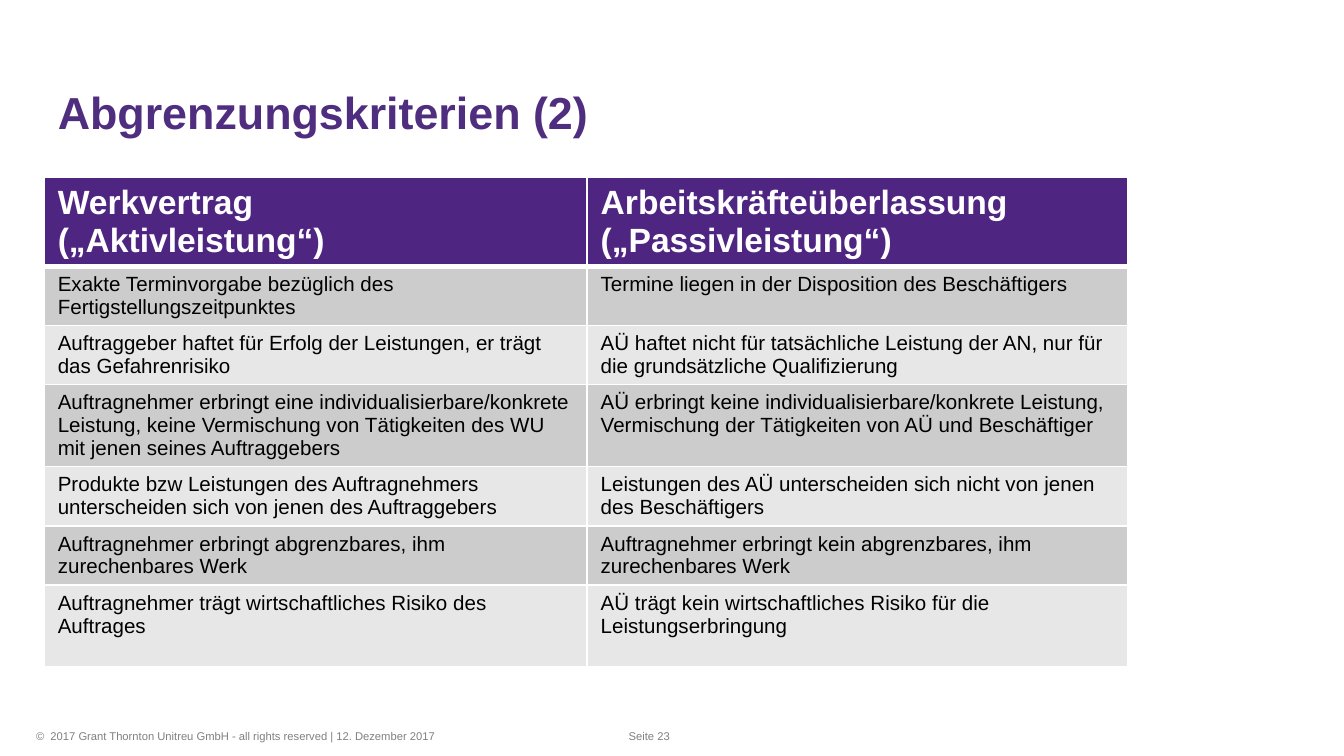
from pptx import Presentation
from pptx.dml.color import RGBColor
from pptx.enum.text import MSO_ANCHOR, PP_ALIGN
from pptx.oxml import parse_xml
from pptx.oxml.ns import nsdecls
from pptx.util import Inches, Pt


def add_run(paragraph, text, size, color, bold=False):
    run = paragraph.add_run()
    run.text = text
    run.font.name = "Arial"
    run.font.size = Pt(size)
    run.font.bold = bold
    run.font.color.rgb = RGBColor.from_string(color)


def add_border(cell, side, width):
    cell._tc.get_or_add_tcPr().append(parse_xml(
        f'<a:{side} {nsdecls("a")} w="{Pt(width)}"><a:solidFill>'
        f'<a:srgbClr val="FFFFFF"/></a:solidFill></a:{side}>'))


# Widescreen 16:9 slide
prs = Presentation()
prs.slide_width = Inches(10)
prs.slide_height = Inches(10 * 9 / 16)
slide = prs.slides.add_slide(prs.slide_layouts[5])

# Title
title = slide.shapes.title
title.left, title.top = Inches(0.33), Inches(0.37)
title.width, title.height = Inches(8.2), Inches(0.92)
title.text_frame.vertical_anchor = MSO_ANCHOR.MIDDLE
heading = title.text_frame.paragraphs[0]
heading.alignment = PP_ALIGN.LEFT
add_run(heading, "Abgrenzungskriterien (2)", 24, "4F2D7F", True)

# Comparison table: header first, one list of paragraphs per header cell
headers = [["Werkvertrag", "(„Aktivleistung“)"],
           ["Arbeitskräfteüberlassung („Passivleistung“)"]]
criteria = [
    ("Exakte Terminvorgabe bezüglich des Fertigstellungszeitpunktes",
     "Termine liegen in der Disposition des Beschäftigers"),
    ("Auftraggeber haftet für Erfolg der Leistungen, er trägt das Gefahrenrisiko",
     "AÜ haftet nicht für tatsächliche Leistung der AN, nur für die "
     "grundsätzliche Qualifizierung"),
    ("Auftragnehmer erbringt eine individualisierbare/konkrete Leistung, keine "
     "Vermischung von Tätigkeiten des WU mit jenen seines Auftraggebers",
     "AÜ erbringt keine individualisierbare/konkrete Leistung, Vermischung der "
     "Tätigkeiten von AÜ und Beschäftiger"),
    ("Produkte bzw Leistungen des Auftragnehmers unterscheiden sich von jenen "
     "des Auftraggebers",
     "Leistungen des AÜ unterscheiden sich nicht von jenen des Beschäftigers"),
    ("Auftragnehmer erbringt abgrenzbares, ihm zurechenbares Werk",
     "Auftragnehmer erbringt kein abgrenzbares, ihm zurechenbares Werk"),
    ("Auftragnehmer trägt wirtschaftliches Risiko des Auftrages",
     "AÜ trägt kein wirtschaftliches Risiko für die Leistungserbringung"),
]
rows = [headers] + [[[text] for text in pair] for pair in criteria]
row_heights = [0.64, 0.44, 0.44, 0.61, 0.44, 0.44, 0.61]
column_widths = [4.04, 4.02]

comparison = slide.shapes.add_table(
    len(rows), len(column_widths), Inches(0.33), Inches(1.32),
    Inches(sum(column_widths)), Inches(sum(row_heights))).table
for column, width in zip(comparison.columns, column_widths):
    column.width = Inches(width)

for r, row in enumerate(rows):
    comparison.rows[r].height = Inches(row_heights[r])
    is_header = r == 0
    fill = "4F2582" if is_header else ("CCCCCC" if r % 2 else "E7E7E7")
    size, color = (18, "FFFFFF") if is_header else (11, "000000")
    for c, lines in enumerate(row):
        cell = comparison.cell(r, c)
        for side in ("lnL", "lnR", "lnT", "lnB"):
            thick = (is_header and side == "lnB") or (r == 1 and side == "lnT")
            add_border(cell, side, 3 if thick else 1)
        cell.fill.solid()
        cell.fill.fore_color.rgb = RGBColor.from_string(fill)
        for i, line in enumerate(lines):
            frame = cell.text_frame
            paragraph = frame.add_paragraph() if i else frame.paragraphs[0]
            add_run(paragraph, line, size, color, is_header)

# Footer: copyright line and page number
copyright_line = ("©  2017 Grant Thornton Unitreu GmbH - all rights reserved"
                  " | 12. Dezember 2017")
for text, left, width in [(copyright_line, 0.17, 6.64), ("Seite 23", 4.58, 0.84)]:
    footer = slide.shapes.add_textbox(
        Inches(left), Inches(5.38), Inches(width), Inches(0.2)).text_frame
    footer.word_wrap = True
    add_run(footer.paragraphs[0], text, 6, "808080")

prs.save("out.pptx")
